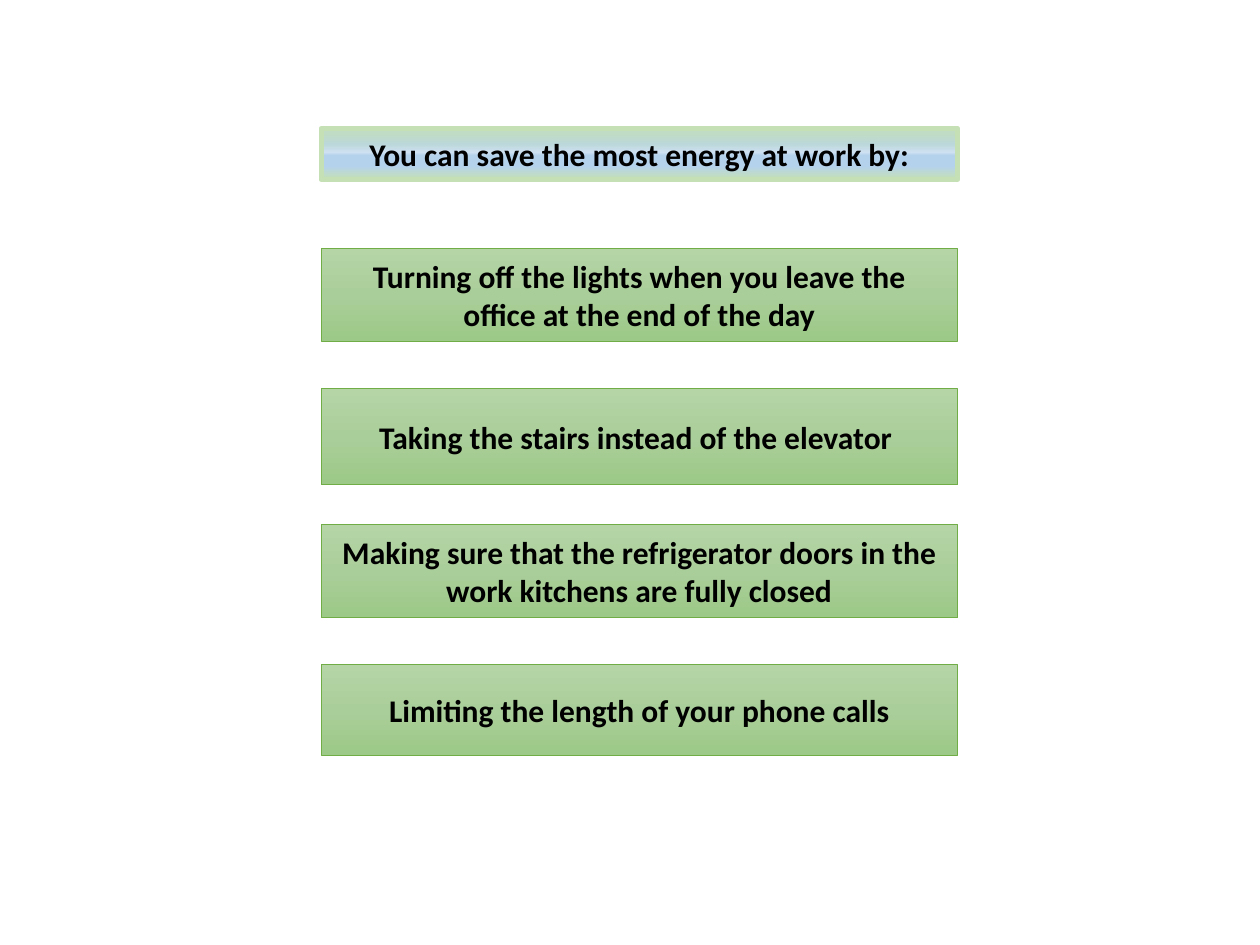
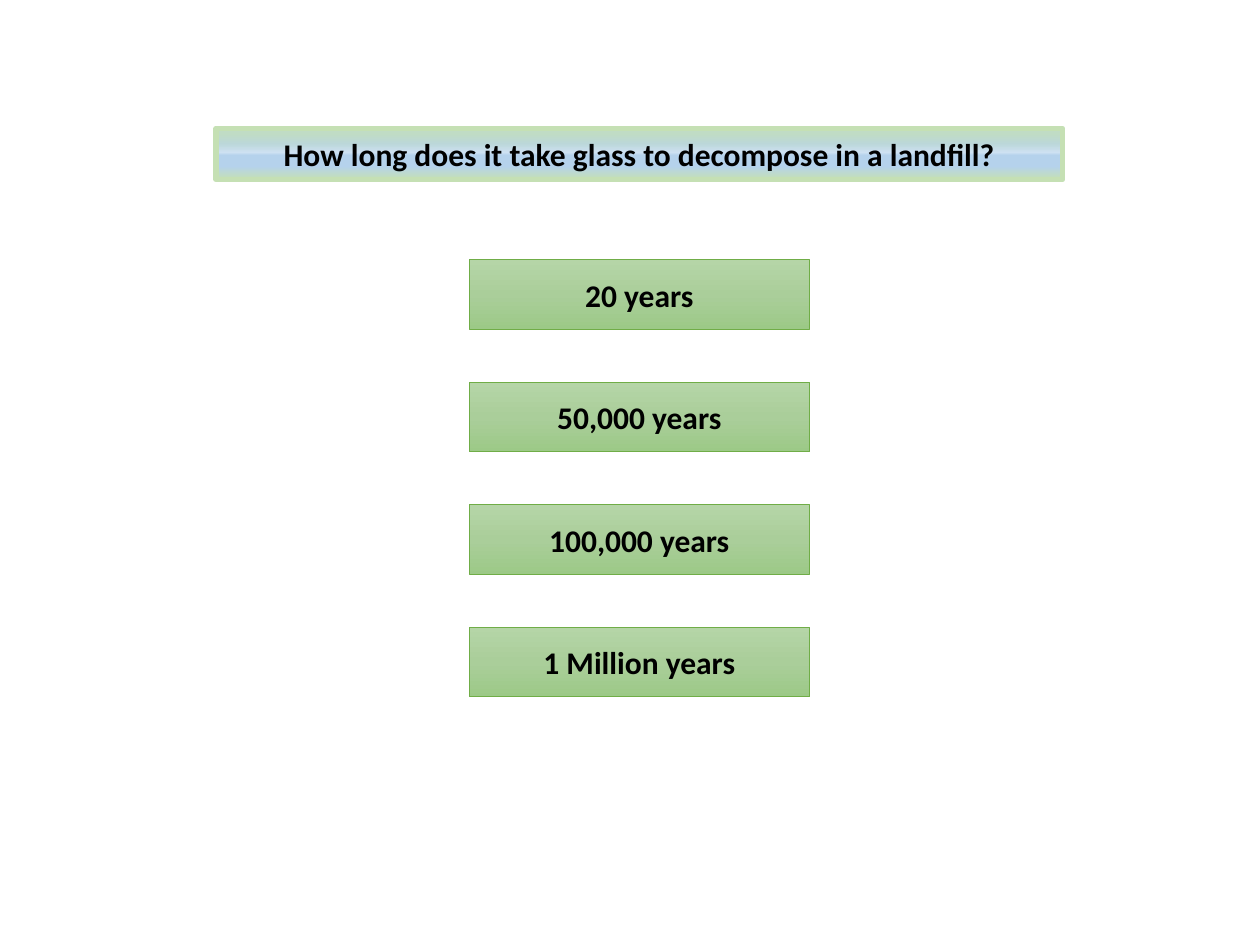
from lxml import etree
from pptx import Presentation
from pptx.dml.color import RGBColor
from pptx.enum.shapes import MSO_SHAPE
from pptx.enum.text import MSO_ANCHOR, MSO_AUTO_SIZE, PP_ALIGN
from pptx.oxml.ns import qn
from pptx.util import Cm, Pt

RECT = MSO_SHAPE.RECTANGLE
BUTTON = MSO_SHAPE.ACTION_BUTTON_CUSTOM
TOP, MIDDLE = MSO_ANCHOR.TOP, MSO_ANCHOR.MIDDLE
CENTER = PP_ALIGN.CENTER
GROW, FIXED = MSO_AUTO_SIZE.SHAPE_TO_FIT_TEXT, MSO_AUTO_SIZE.NONE

# Shared styles: gradient stops are (percent, colour), lengths are cm
QUESTION = {
    "shape": RECT, "line": "C5E0B4", "line_width": 3,
    "stops": [(12, "C0DCC5"), (30, "BBD7D9"), (47, "CEE1F2"),
              (53, "B5D2EC"), (74, "B5D2EC"), (100, "C5E0B4")],
    "frame": {"word_wrap": True, "vertical_anchor": TOP, "auto_size": GROW},
}
ANSWER = {
    "shape": BUTTON, "line": "70AD47", "line_width": 0.5,
    "stops": [(0, "B5D5A7"), (50, "AACE9A"), (100, "9CC987")],
    "frame": {"word_wrap": True, "vertical_anchor": MIDDLE, "auto_size": FIXED},
}
FONT = {"name": "Calibri", "size": Pt(18), "bold": True}
TEXT_COLOR = "000000"
CENTER_X = 12.89
QUESTION_TOP, QUESTION_HEIGHT = 2.59, 1.03

# Answers are (text, top, height)
WORK_ANSWERS = [
    ("Turning off the lights when you leave the office at the end of the day", 5, 1.88),
    ("Taking the stairs instead of the elevator ", 7.84, 1.93),
    ("Making sure that the refrigerator doors in the work kitchens are fully closed", 10.57, 1.88),
    ("Limiting the length of your phone calls", 13.4, 1.83),
]
GLASS_YEARS = ["20 years", "50,000 years", "100,000 years", "1 Million years"]
GLASS_TOP, GLASS_PITCH, GLASS_HEIGHT = 5.24, 2.47, 1.4


def rgb(color):
    return RGBColor.from_string(color)


def set_format(target, values):
    for name, value in values.items():
        setattr(target, name, value)


def fill_gradient(sp, stops):
    """Fill from top to bottom with any number of stops."""
    sp.fill.gradient()
    sp.fill.gradient_angle = 270
    stop_list = next(sp._element.spPr.iter(qn("a:gsLst")))
    for stop in list(stop_list):
        stop_list.remove(stop)
    for percent, color in stops:
        stop = etree.SubElement(stop_list, qn("a:gs"), pos=str(percent * 1000))
        etree.SubElement(stop, qn("a:srgbClr"), val=color)


def add_box(s, text, top, width, height, style):
    """Add a gradient box with centred text on the common axis."""
    sp = s.shapes.add_shape(style["shape"], Cm(CENTER_X - width / 2), Cm(top),
                            Cm(width), Cm(height))
    sp.shadow.inherit = False
    fill_gradient(sp, style["stops"])
    sp.line.color.rgb = rgb(style["line"])
    sp.line.width = Pt(style["line_width"])
    tf = sp.text_frame
    set_format(tf, style["frame"])
    p = tf.paragraphs[0]
    p.alignment = CENTER
    r = p.add_run()
    r.text = text
    set_format(r.font, FONT)
    r.font.color.rgb = rgb(TEXT_COLOR)


def add_quiz_slide(prs, question, question_width, answers, answer_width):
    s = prs.slides.add_slide(prs.slide_layouts[6])
    add_box(s, question, QUESTION_TOP, question_width, QUESTION_HEIGHT, QUESTION)
    for text, top, height in answers:
        add_box(s, text, top, answer_width, height, ANSWER)


def main():
    prs = Presentation()
    prs.slide_width, prs.slide_height = Cm(25.4), Cm(19.05)

    # Saving energy at work
    add_quiz_slide(prs, "You can save the most energy at work by:", 12.83,
                   WORK_ANSWERS, 12.83)

    # Glass in a landfill
    glass_answers = [(text, GLASS_TOP + i * GLASS_PITCH, GLASS_HEIGHT)
                     for i, text in enumerate(GLASS_YEARS)]
    add_quiz_slide(prs, "How long does it take glass to decompose in a landfill?",
                   17.07, glass_answers, 6.86)

    prs.save("out.pptx")


if __name__ == "__main__":
    main()
